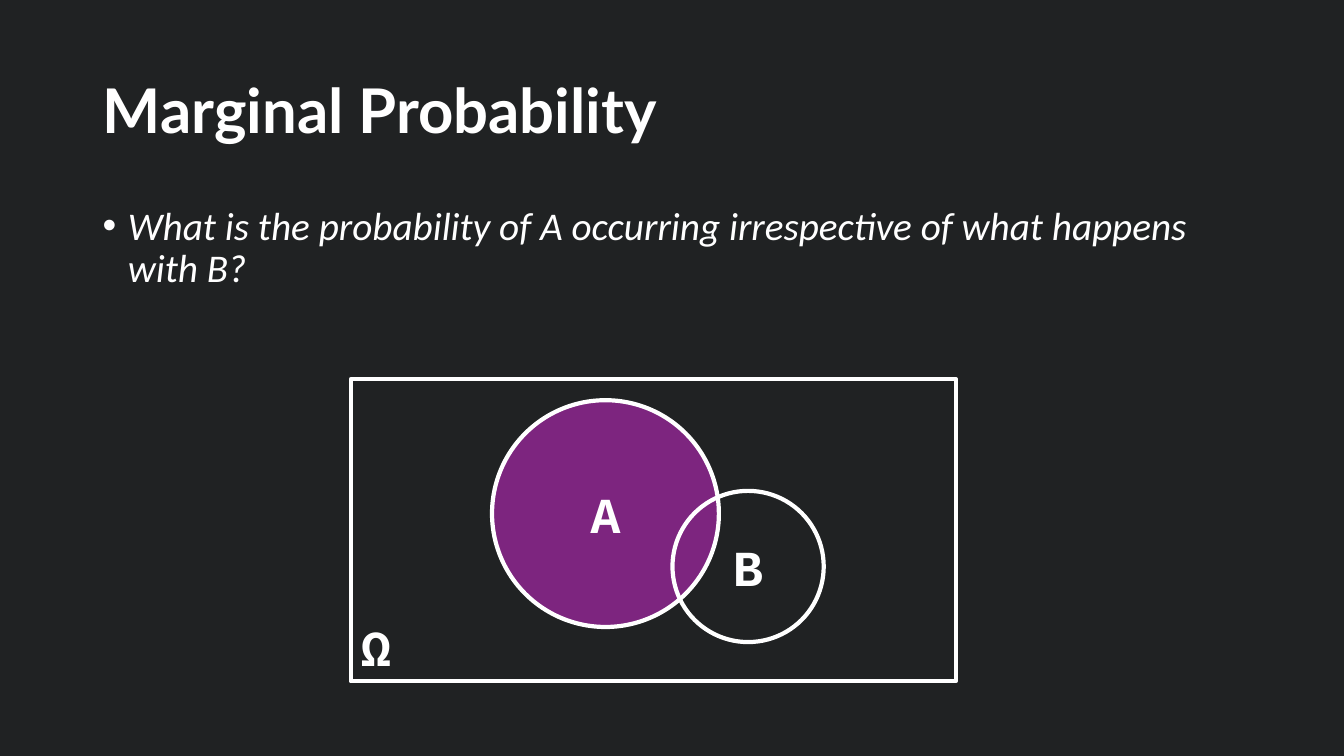
from lxml import etree
from pptx import Presentation
from pptx.dml.color import RGBColor
from pptx.enum.shapes import MSO_SHAPE
from pptx.enum.text import MSO_ANCHOR, MSO_AUTO_SIZE, PP_ALIGN
from pptx.oxml.ns import qn
from pptx.util import Pt

PX = 9144  # EMU per px, 100 px to the inch
TITLE_ONLY = 5
BACKGROUND = RGBColor(0x20, 0x22, 0x23)
WHITE = RGBColor(0xFF, 0xFF, 0xFF)
PURPLE = RGBColor(0xDB, 0x29, 0xDB)
RECTANGLE, OVAL = MSO_SHAPE.RECTANGLE, MSO_SHAPE.OVAL
TOP, MIDDLE, BOTTOM = MSO_ANCHOR.TOP, MSO_ANCHOR.MIDDLE, MSO_ANCHOR.BOTTOM
LEFT, CENTER = PP_ALIGN.LEFT, PP_ALIGN.CENTER

TITLE_FONT = {"name": "Lato", "size": Pt(44), "bold": True}
BODY_FONT = {"name": "Calibri", "size": Pt(28), "italic": True}
LABEL_FONT = {"name": "Courier New", "size": Pt(36), "bold": True}


def scaled(box):
    return [length * PX for length in box]


def write(shape, text, font, align, anchor, line_spacing=1.0):
    frame = shape.text_frame
    frame.auto_size = MSO_AUTO_SIZE.NONE
    frame.word_wrap = True
    frame.vertical_anchor = anchor
    para = frame.paragraphs[0]
    para.alignment = align
    para.line_spacing = line_spacing
    span = para.add_run()
    span.text = text
    for name, value in font.items():
        setattr(span.font, name, value)
    span.font.color.rgb = WHITE
    return para


def add_title(page, box, text):
    title = page.shapes.title
    title.left, title.top, title.width, title.height = scaled(box)
    write(title, text, TITLE_FONT, LEFT, MIDDLE, 0.9)


def add_question(page, box, text):
    body = page.shapes.add_textbox(*scaled(box))
    para = write(body, text, BODY_FONT, LEFT, TOP, 0.9)
    properties = para._p.get_or_add_pPr()
    properties.set("marL", str(25 * PX))
    properties.set("indent", str(-25 * PX))
    etree.SubElement(properties, qn("a:buFont"), typeface="Arial")
    etree.SubElement(properties, qn("a:buChar"), char="•")


def add_outline(group, kind, box, label, align, anchor):
    shape = group.shapes.add_shape(kind, *scaled(box))
    shape.shadow.inherit = False
    shape.fill.background()
    shape.line.color.rgb = WHITE
    shape.line.width = Pt(3)
    write(shape, label, LABEL_FONT, align, anchor)
    return shape


def add_venn(page, box):
    left, top, width, height = box
    group = page.shapes.add_group_shape()
    # Sample space
    add_outline(group, RECTANGLE, box, "Ω", LEFT, BOTTOM)
    # Events, as offset from the sample space and diameter
    events = {"A": (140, 21, 225), "B": (319, 111, 150)}
    circles = {}
    for label, (across, down, size) in events.items():
        place = (left + across, top + down, size, size)
        circles[label] = add_outline(group, OVAL, place, label, CENTER, MIDDLE)
    # Half-transparent fill on the event in question
    fill = circles["A"].fill
    fill.solid()
    fill.fore_color.rgb = PURPLE
    color = circles["A"]._element.spPr.find(qn("a:solidFill"))[0]
    etree.SubElement(color, qn("a:alpha"), val="50000")


def main():
    deck = Presentation()
    deck.slide_width, deck.slide_height = scaled((1333, 750))
    page = deck.slides.add_slide(deck.slide_layouts[TITLE_ONLY])
    page.background.fill.solid()
    page.background.fill.fore_color.rgb = BACKGROUND

    add_title(page, (92, 40, 1150, 145), "Marginal Probability")
    add_question(
        page,
        (92, 200, 1150, 476),
        "What is the probability of A occurring irrespective of what happens with B?",
    )
    add_venn(page, (348, 376, 600, 300))
    deck.save("out.pptx")


if __name__ == "__main__":
    main()
